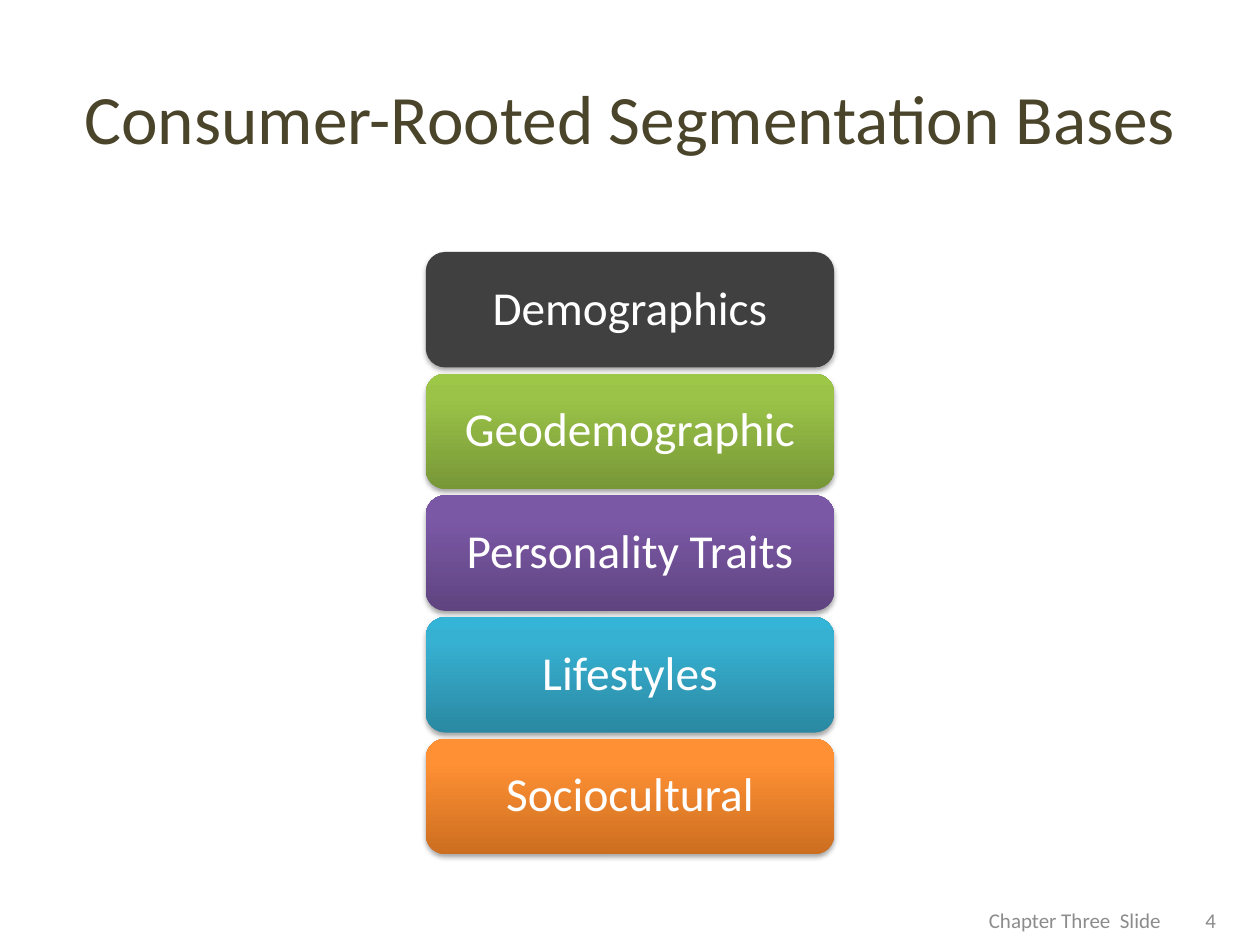
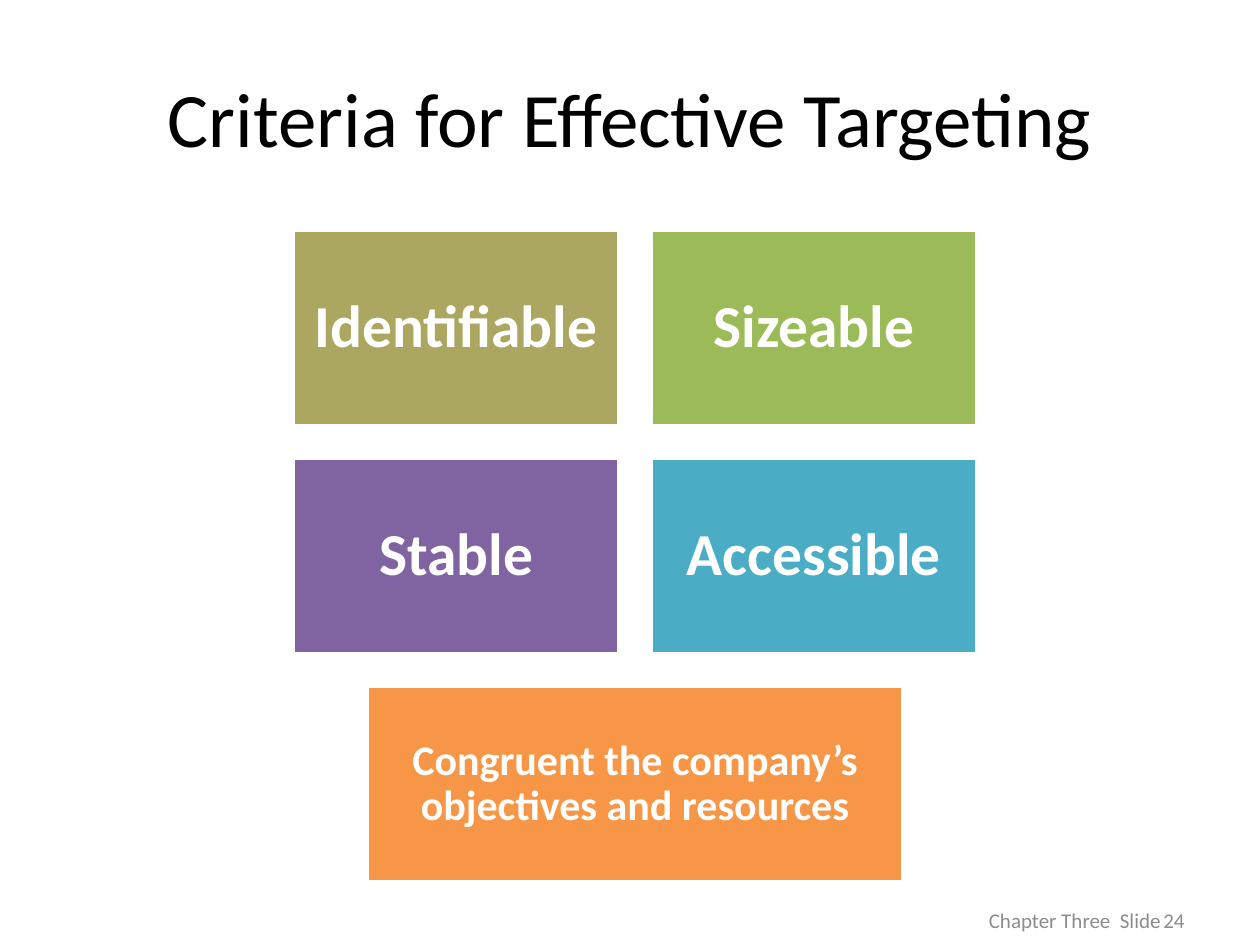
import copy

import lxml.etree
import pptx
import pptx.dml.color
import pptx.enum.shapes
import pptx.enum.text
import pptx.oxml.ns
import pptx.util

Inches = pptx.util.Inches
Pt = pptx.util.Pt
qn = pptx.oxml.ns.qn
ALIGN = pptx.enum.text.PP_ALIGN
SHAPES = pptx.enum.shapes.MSO_SHAPE

FONT = "Calibri"
COLORS = {
    "white": "FFFFFF", "black": "000000", "footer": "8C8C8C",
    "brown": "4A452A", "charcoal": "404040", "khaki": "ABA761",
    "green": "9BBB59", "purple": "8064A2", "teal": "4BACC6",
    "orange": "F79646",
    "green_low": "779737", "green_mid": "9BC348", "green_high": "9DC746",
    "purple_low": "5F4480", "purple_mid": "7B58A6", "purple_high": "7C57A8",
    "teal_low": "2A88A2", "teal_mid": "37B1D2", "teal_high": "34B4D6",
    "orange_low": "CC6E20", "orange_mid": "FF9034", "orange_high": "FF9136",
}


def rgb(name):
    return pptx.dml.color.RGBColor.from_string(COLORS[name])


def write(shape, text, size, color, align=ALIGN.CENTER, bold=False,
          inset=(0.1, 0.05), spacing=1):
    """Put one vertically centred paragraph in a shape; inset is (sides, top and bottom)."""
    frame = shape.text_frame
    frame.word_wrap = True
    frame.vertical_anchor = pptx.enum.text.MSO_ANCHOR.MIDDLE
    frame.margin_left = frame.margin_right = Inches(inset[0])
    frame.margin_top = frame.margin_bottom = Inches(inset[1])
    para = frame.paragraphs[0]
    para.alignment = align
    para.line_spacing = spacing
    span = para.add_run()
    span.text = text
    span.font.name = FONT
    span.font.size = Pt(size)
    span.font.bold = bold
    span.font.color.rgb = rgb(color)


def add_label(page, box, text, size, color, align=ALIGN.CENTER):
    label = page.shapes.add_textbox(*map(Inches, box))
    write(label, text, size, color, align)


def add_block(page, kind, box):
    block = page.shapes.add_shape(kind, *map(Inches, box))
    block.shadow.inherit = False
    return block


def add_page(deck, title, title_size, title_color, number, number_left):
    """Add a slide with the shared title and footer."""
    page = deck.slides.add_slide(deck.slide_layouts[6])
    add_label(page, (0.5, 0.3, 9, 1.25), title, title_size, title_color)
    add_label(page, (number_left, 7.1, 2.33, 0.4), number, 12, "footer", ALIGN.RIGHT)
    add_label(page, (7.75, 7.1, 1.83, 0.4), "Chapter Three  Slide", 12, "footer", ALIGN.LEFT)
    return page


def fill_gradient(shape, hue):
    """Shade from dark at the bottom to bright at the top."""
    fill = shape.fill
    fill.gradient()
    fill.gradient_angle = 90
    stop_list = shape.element.spPr.find(".//" + qn("a:gsLst"))
    stop_list.insert(1, copy.deepcopy(stop_list[0]))
    for stop, position, tone in zip(fill.gradient_stops, (0, 0.8, 1), ("low", "mid", "high")):
        stop.position = position
        stop.color.rgb = rgb(f"{hue}_{tone}")


def add_soft_shadow(shape):
    effects = shape.element.spPr.find(qn("a:effectLst"))
    shadow = lxml.etree.SubElement(
        effects, qn("a:outerShdw"), blurRad=str(Pt(3.1)), dist=str(Pt(1.8)),
        dir="5400000", rotWithShape="0")
    color = lxml.etree.SubElement(shadow, qn("a:srgbClr"), val=COLORS["black"])
    lxml.etree.SubElement(color, qn("a:alpha"), val="35000")


def add_base_stack(page, box, bases, gap=0.05):
    """Stack rounded bars of equal height down the box."""
    left, top, width, height = box
    bar_height = (height - gap * (len(bases) - 1)) / len(bases)
    for row, (text, hue) in enumerate(bases):
        bar_top = top + row * (bar_height + gap)
        bar = add_block(page, SHAPES.ROUNDED_RECTANGLE, (left, bar_top, width, bar_height))
        if hue == "charcoal":
            bar.fill.solid()
            bar.fill.fore_color.rgb = rgb(hue)
        else:
            fill_gradient(bar, hue)
        bar.line.fill.background()
        add_soft_shadow(bar)
        write(bar, text, 27, "white", inset=(0.11, 0.06), spacing=0.9)


def add_criterion(page, box, text, color, size, inset):
    tile = add_block(page, SHAPES.RECTANGLE, box)
    tile.fill.solid()
    tile.fill.fore_color.rgb = rgb(color)
    tile.line.color.rgb = rgb("white")
    tile.line.width = Pt(2)
    write(tile, text, size, "white", bold=True, inset=(inset, inset), spacing=0.9)


def add_criteria_grid(page, box, criteria, closing, closing_width=4.25, gap=0.26):
    """Set the criteria two to a row, with a wider closing tile centred below."""
    left, top, width, height = box
    tile_width = (width - gap) / 2
    rows = len(criteria) // 2 + 1
    tile_height = (height - gap * (rows - 1)) / rows
    for index, (text, color) in enumerate(criteria):
        row, column = divmod(index, 2)
        tile_box = (left + column * (tile_width + gap), top + row * (tile_height + gap),
                    tile_width, tile_height)
        add_criterion(page, tile_box, text, color, 34, 0.14)
    closing_box = (left + (width - closing_width) / 2, top + height - tile_height,
                   closing_width, tile_height)
    add_criterion(page, closing_box, *closing, 24, 0.1)


def build_bases_page(deck):
    page = add_page(deck, "Consumer-Rooted Segmentation Bases", 39.6, "brown", "4", 7.42)
    add_base_stack(page, (3.38, 2, 3.24, 4.78), [
        ("Demographics", "charcoal"),
        ("Geodemographic", "green"),
        ("Personality Traits", "purple"),
        ("Lifestyles", "teal"),
        ("Sociocultural", "orange"),
    ])


def build_criteria_page(deck):
    page = add_page(deck, "Criteria for Effective Targeting", 44, "black", "24", 7.17)
    add_criteria_grid(page, (2.33, 1.83, 5.42, 5.17), [
        ("Identifiable", "khaki"),
        ("Sizeable", "green"),
        ("Stable", "purple"),
        ("Accessible", "teal"),
    ], ("Congruent the company’s objectives and resources", "orange"))


def main():
    deck = pptx.Presentation()
    deck.slide_width = Inches(10)
    deck.slide_height = Inches(7.5)
    build_bases_page(deck)
    build_criteria_page(deck)
    deck.save("out.pptx")


if __name__ == "__main__":
    main()
